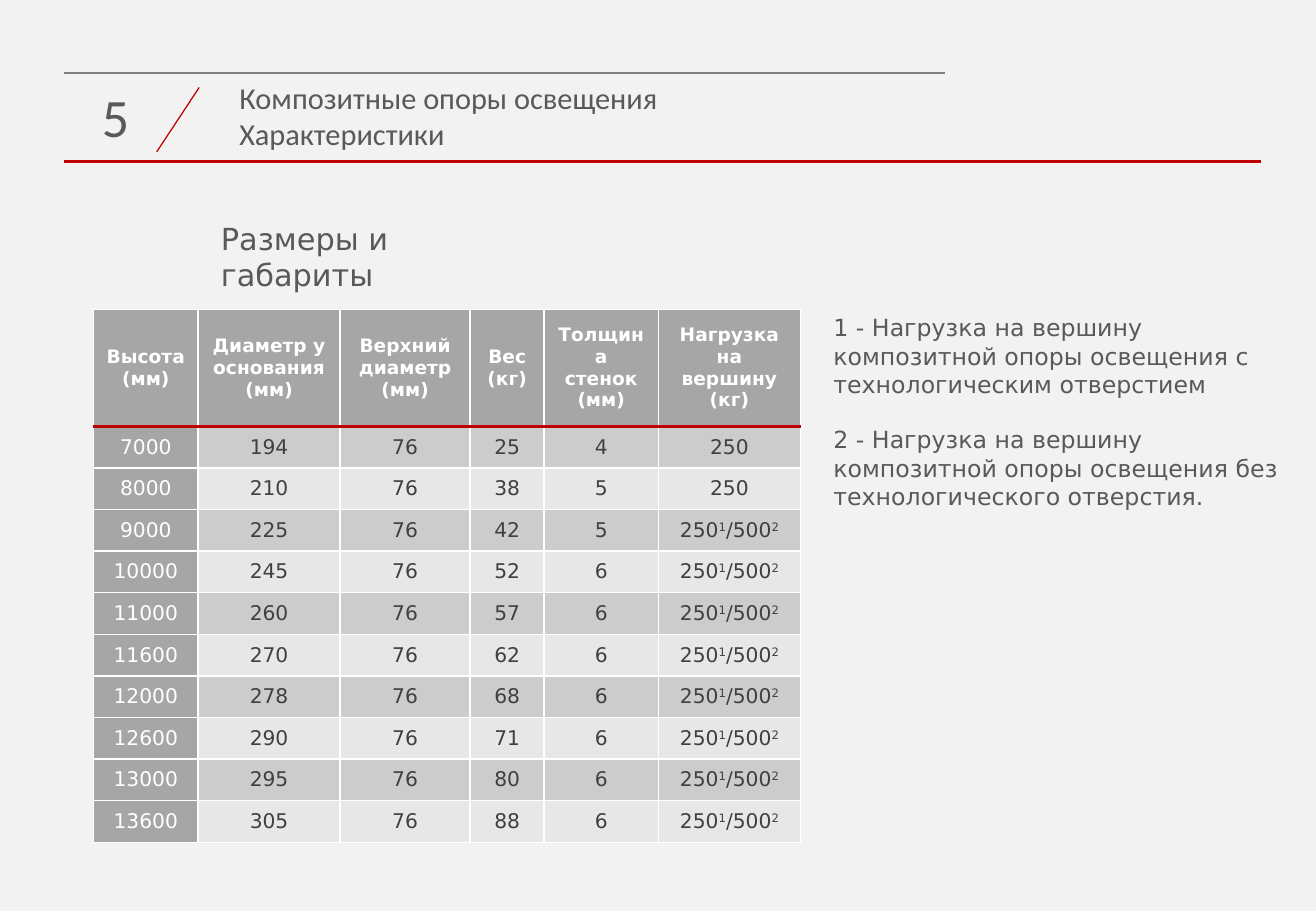
from dataclasses import dataclass

import lxml.etree
import pptx
import pptx.dml.color
import pptx.enum.shapes
import pptx.enum.text
import pptx.oxml.ns
import pptx.slide
import pptx.table
import pptx.text.text
import pptx.util

RGBColor = pptx.dml.color.RGBColor
BACKGROUND = RGBColor(0xF2, 0xF2, 0xF2)
WHITE = RGBColor(0xFF, 0xFF, 0xFF)
RED = RGBColor(0xC0, 0x00, 0x00)
RULE_GRAY = RGBColor(0x80, 0x80, 0x80)
TEXT_GRAY = RGBColor(0x59, 0x59, 0x59)
CELL_TEXT = RGBColor(0x40, 0x40, 0x40)
HEADER_FILL = RGBColor(0xA6, 0xA6, 0xA6)
BAND_FILLS = (RGBColor(0xCC, 0xCC, 0xCC), RGBColor(0xE7, 0xE7, 0xE7))

HEADING_FONT = "Calibri"
BODY_FONT = "DejaVu Sans"
SLIDE_WIDTH = pptx.util.Inches(10.83)
SLIDE_HEIGHT = pptx.util.Inches(7.5)
MIDDLE = pptx.enum.text.MSO_ANCHOR.MIDDLE
TOP = pptx.enum.text.MSO_ANCHOR.TOP
LEFT = pptx.enum.text.PP_ALIGN.LEFT
CENTER = pptx.enum.text.PP_ALIGN.CENTER


@dataclass(frozen=True)
class Box:
    """Place and size in percent of the slide's width and height."""
    left: float
    top: float
    width: float
    height: float


@dataclass(frozen=True)
class Rule:
    """A straight line between two points, in percent of the slide."""
    start: tuple[float, float]
    end: tuple[float, float]
    color: RGBColor
    weight: float


@dataclass(frozen=True)
class Column:
    heading: tuple[str, ...]
    width: float
    values: tuple[str, ...]


RULES = (
    Rule((4.89, 8), (71.84, 8), RULE_GRAY, 1.5),
    Rule((4.89, 17.73), (95.84, 17.73), RED, 1.5),
    Rule((11.91, 16.67), (15.14, 9.6), RED, 0.75),
)
NUMBER_BOX = Box(4.89, 8, 8.68, 11.47)
TITLE_BOX = Box(17.27, 8, 54.57, 9.47)
SUBTITLE_BOX = Box(15.88, 23.47, 26, 9.5)
NOTES_BOX = Box(62.42, 33.73, 35.64, 23.33)
TABLE_LEFT, TABLE_TOP = 7.11, 34
HEADER_HEIGHT, ROW_HEIGHT = 12.8, 4.57

# A pair of carets encloses superscript text
COLUMNS = (
    Column(("Высота (мм)",), 7.94,
           ("7000", "8000", "9000", "10000", "11000", "11600", "12000", "12600", "13000", "13600")),
    Column(("Диаметр у", "основания", "(мм)"), 10.8,
           ("194", "210", "225", "245", "260", "270", "278", "290", "295", "305")),
    Column(("Верхний", "диаметр", "(мм)"), 9.88, ("76",) * 10),
    Column(("Вес (кг)",), 5.63,
           ("25", "38", "42", "52", "57", "62", "68", "71", "80", "88")),
    Column(("Толщина", "стенок", "(мм)"), 8.68, ("4", "5", "5") + ("6",) * 7),
    Column(("Нагрузка на", "вершину (кг)"), 10.8, ("250",) * 2 + ("250^1^/500^2^",) * 8),
)
NOTES = (
    "1 - Нагрузка на вершину композитной опоры освещения с технологическим отверстием",
    "2 - Нагрузка на вершину композитной опоры освещения без технологического отверстия.",
)


def across(percent: float) -> int:
    return int(SLIDE_WIDTH * percent / 100)


def down(percent: float) -> int:
    return int(SLIDE_HEIGHT * percent / 100)


def write_text(frame: pptx.text.text.TextFrame, paragraphs: tuple[str, ...], *, size: float,
               color: RGBColor = TEXT_GRAY, font: str = BODY_FONT, bold: bool = False,
               align: pptx.enum.text.PP_ALIGN = LEFT, gap: float = 0) -> None:
    for index, text in enumerate(paragraphs):
        paragraph = frame.add_paragraph() if index else frame.paragraphs[0]
        paragraph.alignment = align
        paragraph.space_before = pptx.util.Pt(gap if index else 0)
        for part, piece in enumerate(text.split("^")):
            if not piece:
                continue
            run = paragraph.add_run()
            run.text = piece
            run.font.name = font
            run.font.size = pptx.util.Pt(size)
            run.font.bold = bold
            run.font.color.rgb = color
            if part % 2:
                run.font._element.set("baseline", "30000")


def place(shape, box: Box, anchor: pptx.enum.text.MSO_ANCHOR) -> pptx.text.text.TextFrame:
    shape.left, shape.top = across(box.left), down(box.top)
    shape.width, shape.height = across(box.width), down(box.height)
    frame = shape.text_frame
    frame.word_wrap = True
    frame.auto_size = pptx.enum.text.MSO_AUTO_SIZE.NONE
    frame.vertical_anchor = anchor
    return frame


def add_text_box(slide: pptx.slide.Slide, box: Box,
                 anchor: pptx.enum.text.MSO_ANCHOR = TOP) -> pptx.text.text.TextFrame:
    return place(slide.shapes.add_textbox(0, 0, 0, 0), box, anchor)


def add_rule(slide: pptx.slide.Slide, rule: Rule) -> None:
    connector = slide.shapes.add_connector(
        pptx.enum.shapes.MSO_CONNECTOR.STRAIGHT,
        across(rule.start[0]), down(rule.start[1]), across(rule.end[0]), down(rule.end[1]))
    connector.line.color.rgb = rule.color
    connector.line.width = pptx.util.Pt(rule.weight)
    lxml.etree.SubElement(connector._element.spPr, pptx.oxml.ns.qn("a:effectLst"))


def add_border(cell: pptx.table._Cell, side: str, color: RGBColor, weight: float) -> None:
    line = lxml.etree.SubElement(cell._tc.get_or_add_tcPr(), pptx.oxml.ns.qn(f"a:ln{side}"),
                                 w=str(pptx.util.Pt(weight)))
    fill = lxml.etree.SubElement(line, pptx.oxml.ns.qn("a:solidFill"))
    lxml.etree.SubElement(fill, pptx.oxml.ns.qn("a:srgbClr"), val=str(color))


def format_cell(cell: pptx.table._Cell, row: int, fill: RGBColor) -> None:
    cell.vertical_anchor = MIDDLE
    cell.margin_left = cell.margin_right = pptx.util.Inches(0.08 if row else 0.07)
    cell.margin_top = cell.margin_bottom = 0
    for side in "LRTB":
        under_header = (side, row) in (("B", 0), ("T", 1))
        add_border(cell, side, RED if under_header else WHITE, 2.25 if under_header else 1)
    cell.fill.solid()
    cell.fill.fore_color.rgb = fill


def add_size_table(slide: pptx.slide.Slide) -> None:
    row_count = len(COLUMNS[0].values)
    table = slide.shapes.add_table(
        row_count + 1, len(COLUMNS), across(TABLE_LEFT), down(TABLE_TOP),
        across(sum(column.width for column in COLUMNS)),
        down(HEADER_HEIGHT + row_count * ROW_HEIGHT)).table
    table.horz_banding = False
    for index, row in enumerate(table.rows):
        row.height = down(ROW_HEIGHT if index else HEADER_HEIGHT)
    for position, column in enumerate(COLUMNS):
        table.columns[position].width = across(column.width)
        header = table.cell(0, position)
        format_cell(header, 0, HEADER_FILL)
        write_text(header.text_frame, column.heading, size=11, color=WHITE, bold=True, align=CENTER)
        for row, value in enumerate(column.values, start=1):
            cell = table.cell(row, position)
            format_cell(cell, row, BAND_FILLS[(row - 1) % 2] if position else HEADER_FILL)
            write_text(cell.text_frame, (value,), size=12, align=CENTER,
                       color=CELL_TEXT if position else WHITE)


def main() -> None:
    presentation = pptx.Presentation()
    presentation.slide_width, presentation.slide_height = SLIDE_WIDTH, SLIDE_HEIGHT
    slide = presentation.slides.add_slide(presentation.slide_layouts.get_by_name("Title Only"))
    slide.background.fill.solid()
    slide.background.fill.fore_color.rgb = BACKGROUND

    # Heading band with the section number
    for rule in RULES:
        add_rule(slide, rule)
    number = add_text_box(slide, NUMBER_BOX, MIDDLE)
    number.margin_left, number.margin_bottom = 0, pptx.util.Inches(0.2)
    write_text(number, ("5",), size=32, font=HEADING_FONT, align=CENTER)
    title = place(slide.shapes.title, TITLE_BOX, TOP)
    write_text(title, ("Композитные опоры освещения", "Характеристики"), size=18, font=HEADING_FONT)

    # Dimensions table with its caption and footnotes
    write_text(add_text_box(slide, SUBTITLE_BOX), ("Размеры и габариты",), size=18)
    add_size_table(slide)
    write_text(add_text_box(slide, NOTES_BOX), NOTES, size=14, gap=16)

    presentation.save("out.pptx")


if __name__ == "__main__":
    main()
